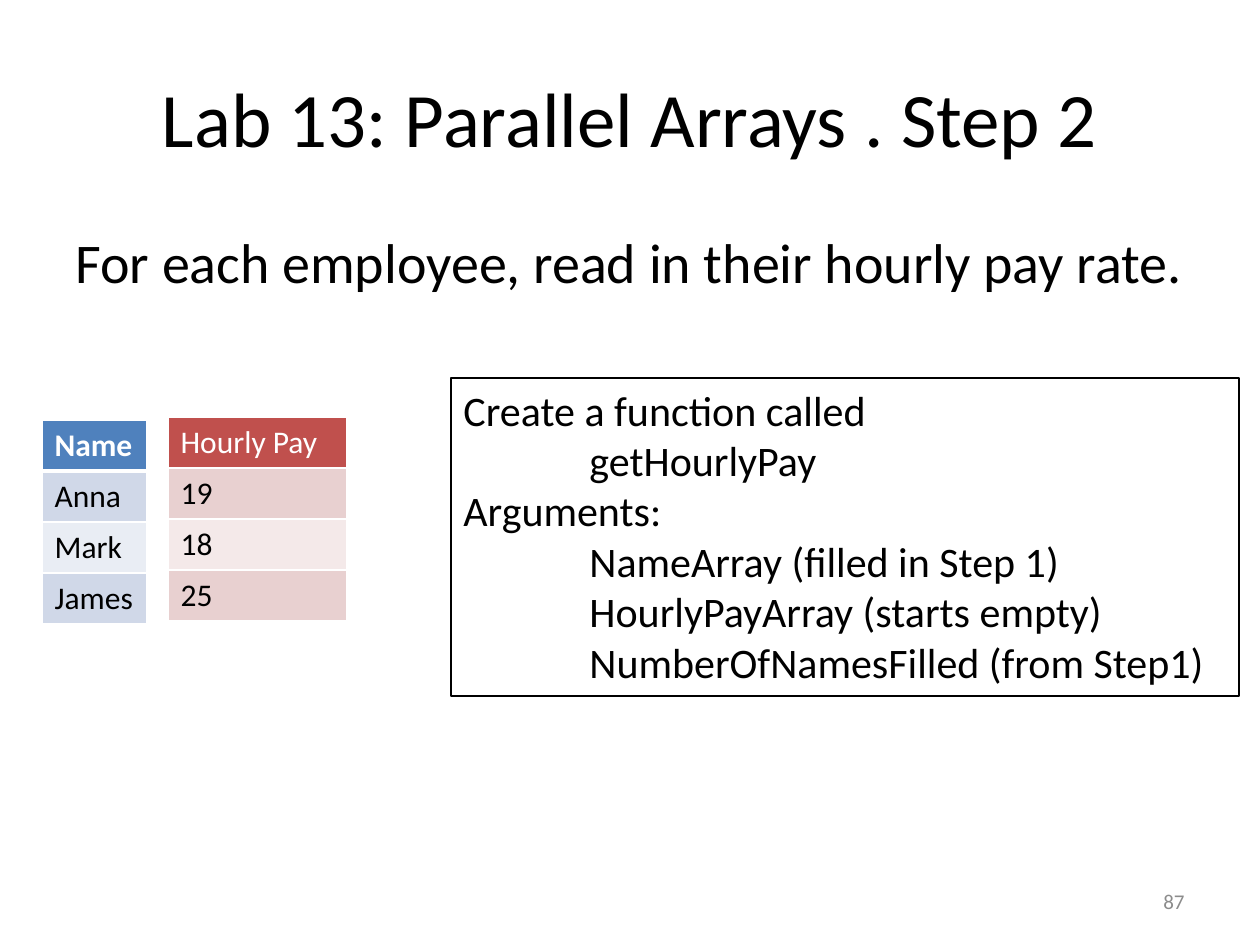
from lxml import etree
from pptx import Presentation
from pptx.dml.color import RGBColor
from pptx.enum.shapes import MSO_SHAPE
from pptx.enum.text import MSO_ANCHOR, PP_ALIGN
from pptx.oxml.ns import qn
from pptx.util import Emu, Pt

FONT = "Calibri"
BLACK = RGBColor(0x00, 0x00, 0x00)
WHITE = RGBColor(0xFF, 0xFF, 0xFF)
GRAY = RGBColor(0x8C, 0x8C, 0x8C)
BLUE = RGBColor(0x4F, 0x81, 0xBD)
BLUE_BANDS = (RGBColor(0xD0, 0xD8, 0xE8), RGBColor(0xE9, 0xED, 0xF4))
RED = RGBColor(0xC0, 0x50, 0x4D)
RED_BANDS = (RGBColor(0xE8, 0xD0, 0xD0), RGBColor(0xF4, 0xE9, 0xE9))
PIXELS_PER_INCH = 126


def px(value):
    return Emu(round(value * 914400 / PIXELS_PER_INCH))


def add_run(paragraph, text, size, color=BLACK, bold=False):
    run = paragraph.add_run()
    run.text = text
    run.font.name = FONT
    run.font.size = Pt(size)
    run.font.bold = bold
    run.font.color.rgb = color


def add_text(slide, box, text, size, color=BLACK, align=PP_ALIGN.LEFT,
             anchor=MSO_ANCHOR.MIDDLE):
    frame = slide.shapes.add_textbox(*map(px, box)).text_frame
    frame.word_wrap = True
    frame.vertical_anchor = anchor
    frame.paragraphs[0].alignment = align
    add_run(frame.paragraphs[0], text, size, color)


def set_borders(cell, widths):
    """Draw white borders; widths maps an edge tag to points."""
    properties = cell._tc.get_or_add_tcPr()
    for index, (edge, width) in enumerate(widths.items()):
        line = etree.Element(qn(f"a:{edge}"), w=str(Pt(width)))
        fill = etree.SubElement(line, qn("a:solidFill"))
        etree.SubElement(fill, qn("a:srgbClr"), val=str(WHITE))
        properties.insert(index, line)


def add_array_table(slide, box, values, header_color, bands, bold, header_line):
    left, top, width, height = box
    table = slide.shapes.add_table(len(values), 1, *map(px, box)).table
    table.columns[0].width = px(width)
    for index, value in enumerate(values):
        table.rows[index].height = px(height // len(values))
        header = index == 0
        cell = table.cell(index, 0)
        cell.fill.solid()
        cell.fill.fore_color.rgb = header_color if header else bands[(index - 1) % 2]
        add_run(cell.text_frame.paragraphs[0], value, 18,
                WHITE if header else BLACK, bold and header)
        set_borders(cell, {"lnL": 1, "lnR": 1,
                           "lnT": header_line if index == 1 else 1,
                           "lnB": header_line if header else 1})


def add_function_box(slide, box, lines):
    shape = slide.shapes.add_shape(MSO_SHAPE.RECTANGLE, *map(px, box))
    shape.shadow.inherit = False
    shape.fill.background()
    shape.line.color.rgb = BLACK
    shape.line.width = Pt(0.75)
    frame = shape.text_frame
    frame.word_wrap = True
    frame.vertical_anchor = MSO_ANCHOR.TOP
    for index, (indent, text) in enumerate(lines):
        paragraph = frame.add_paragraph() if index else frame.paragraphs[0]
        paragraph.alignment = PP_ALIGN.LEFT
        paragraph._p.get_or_add_pPr().set("marL", str(px(indent)))
        add_run(paragraph, text, 24)


def build_slide(slide):
    # Title, instruction and slide number
    add_text(slide, (63, 38, 1134, 158), "Lab 13: Parallel Arrays . Step 2", 44,
             align=PP_ALIGN.CENTER)
    add_text(slide, (63, 221, 1134, 624),
             "For each employee, read in their hourly pay rate.", 32,
             anchor=MSO_ANCHOR.TOP)
    add_text(slide, (903, 876, 294, 50), "87", 12, GRAY, PP_ALIGN.RIGHT)

    # Parallel arrays
    add_array_table(slide, (42, 420, 105, 204), ("Name", "Anna", "Mark", "James"),
                    BLUE, BLUE_BANDS, True, 3)
    add_array_table(slide, (168, 417, 179, 204), ("Hourly Pay", "19", "18", "25"),
                    RED, RED_BANDS, False, 1)

    # Function description
    tab = PIXELS_PER_INCH
    add_function_box(slide, (451, 378, 788, 318), (
        (0, "Create a function called"),
        (tab, "getHourlyPay"),
        (0, "Arguments:"),
        (tab, "NameArray (filled in Step 1)"),
        (tab, "HourlyPayArray (starts empty)"),
        (tab, "NumberOfNamesFilled (from Step1)"),
    ))


def main():
    presentation = Presentation()
    presentation.slide_width = px(1260)
    presentation.slide_height = px(945)
    build_slide(presentation.slides.add_slide(presentation.slide_layouts[6]))
    presentation.save("out.pptx")


if __name__ == "__main__":
    main()
